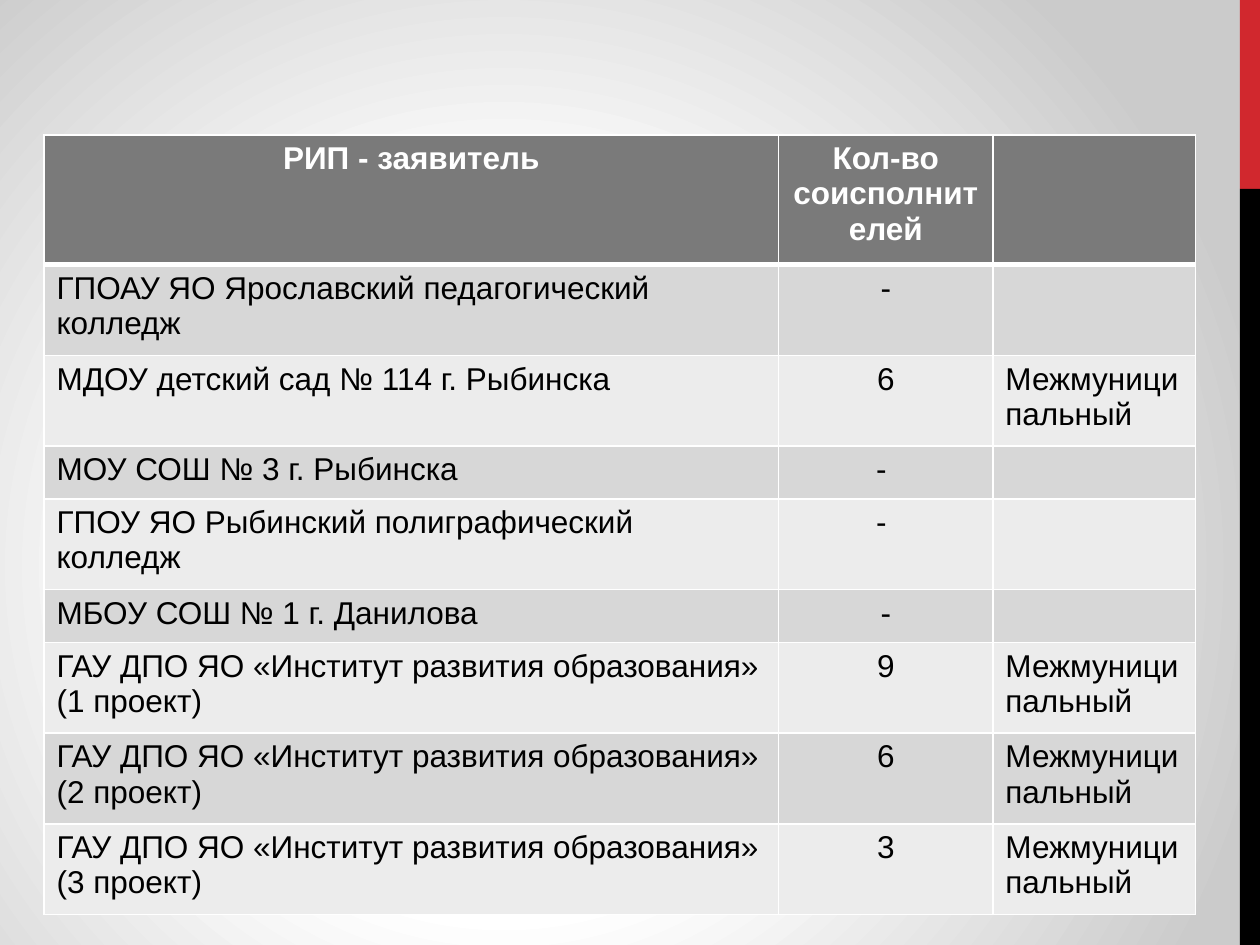
from dataclasses import dataclass

from lxml import etree
from pptx import Presentation
from pptx import util as u
from pptx.dml.color import RGBColor
from pptx.enum import shapes, text
from pptx.oxml.ns import qn


@dataclass(frozen=True)
class Theme:
    font: str = "Arial"
    size: int = 18
    red: str = "D1282E"
    black: str = "000000"
    white: str = "FFFFFF"
    head: str = "7A7A7A"
    bands: tuple = ("D7D7D7", "ECECEC")
    glow: tuple = ((0, "FFFFFF"), (44, "FFFFFF"), (100, "CBCBCB"))
    focus: tuple = (("l", 40), ("t", 60), ("r", 60), ("b", 40))
    thin: int = 1
    thick: int = 3


def node(base, tag, **attrs):
    return etree.SubElement(base, qn(tag), {k: str(v) for k, v in attrs.items()})


class Page:
    """Holds the theme and the slide; places are shares of the slide's size."""

    def __init__(self, deck, theme):
        self.wide, self.high = deck.slide_width, deck.slide_height
        self.theme = theme
        self.slide = deck.slides.add_slide(deck.slide_layouts[6])

    def box(self, x, y, w, h):
        return (int(x * self.wide), int(y * self.high),
                int(w * self.wide), int(h * self.high))

    def backdrop(self):
        self.slide.background.fill.gradient()
        grad = self.slide.element.find(".//" + qn("a:gradFill"))
        for child in list(grad):
            grad.remove(child)
        stops = node(grad, "a:gsLst")
        for pos, color in self.theme.glow:
            node(node(stops, "a:gs", pos=pos * 1000), "a:srgbClr", val=color)
        ring = node(grad, "a:path", path="circle")
        node(ring, "a:fillToRect", **{k: v * 1000 for k, v in self.theme.focus})

    def bar(self, x, y, w, h, color):
        rect = self.slide.shapes.add_shape(
            shapes.MSO_SHAPE.RECTANGLE, *self.box(x, y, w, h))
        rect.shadow.inherit = False
        rect.fill.solid()
        rect.fill.fore_color.rgb = RGBColor.from_string(color)
        rect.line.fill.background()

    def edges(self, cell, base):
        props = cell._tc.get_or_add_tcPr()
        for side in "LRTB":
            width = base if side == "B" else self.theme.thin
            line = node(props, "a:ln" + side, w=u.Pt(width))
            node(node(line, "a:solidFill"), "a:srgbClr", val=self.theme.white)

    def cell(self, cell, words, fill, head, center):
        theme = self.theme
        self.edges(cell, theme.thick if head else theme.thin)
        cell.fill.solid()
        cell.fill.fore_color.rgb = RGBColor.from_string(fill)
        if not words:
            return
        cell.text_frame.text = words
        para = cell.text_frame.paragraphs[0]
        if center:
            para.alignment = text.PP_ALIGN.CENTER
        font = para.runs[0].font
        font.name, font.size, font.bold = theme.font, u.Pt(theme.size), head
        font.color.rgb = RGBColor.from_string(theme.white if head else theme.black)

    def table(self, x, y, cols, rows, data):
        place = self.box(x, y, sum(cols), sum(rows))
        grid = self.slide.shapes.add_table(len(rows), len(cols), *place).table
        grid.first_row = grid.horz_banding = False
        for col, share in zip(grid.columns, cols):
            col.width = int(share * self.wide)
        for row, share in zip(grid.rows, rows):
            row.height = int(share * self.high)
        for r, line in enumerate(data):
            head = r == 0
            fill = self.theme.head if head else self.theme.bands[(r - 1) % 2]
            for c, words in enumerate(line):
                self.cell(grid.cell(r, c), words, fill, head, head or c == 1)


def main():
    deck = Presentation()
    deck.slide_width, deck.slide_height = u.Inches(10), u.Inches(7.5)
    theme = Theme()
    page = Page(deck, theme)

    # Background and side stripe
    page.backdrop()
    left, split = 9.84 / 10, 0.2
    page.bar(left, 0, 1 - left, split, theme.red)
    page.bar(left, split, 1 - left, 1 - split, theme.black)

    # Applicants and their partners
    area = "Межмуниципальный"
    school = "ГАУ ДПО ЯО «Институт развития образования»"
    data = [
        ("РИП - заявитель", "Кол-во соисполнителей", ""),
        ("ГПОАУ ЯО Ярославский педагогический колледж", "-", ""),
        ("МДОУ детский сад № 114 г. Рыбинска", "6", area),
        ("МОУ СОШ № 3 г. Рыбинска", "- ", ""),
        ("ГПОУ ЯО Рыбинский полиграфический колледж", "- ", ""),
        ("МБОУ СОШ № 1 г. Данилова", "-", ""),
    ]
    data += [(f"{school} ({n} проект)", count, area)
             for n, count in enumerate("963", 1)]

    # Row heights follow the number of text lines
    tall = {1: 0.42 / 7.5, 2: 0.72 / 7.5, 3: 1.03 / 7.5}
    rows = [tall[n] for n in (3, 2, 2, 1, 2, 1, 2, 2, 2)]
    page.table(0.035, 1.07 / 7.5, (0.583, 0.17, 0.161), rows, data)

    deck.save("out.pptx")


if __name__ == "__main__":
    main()
